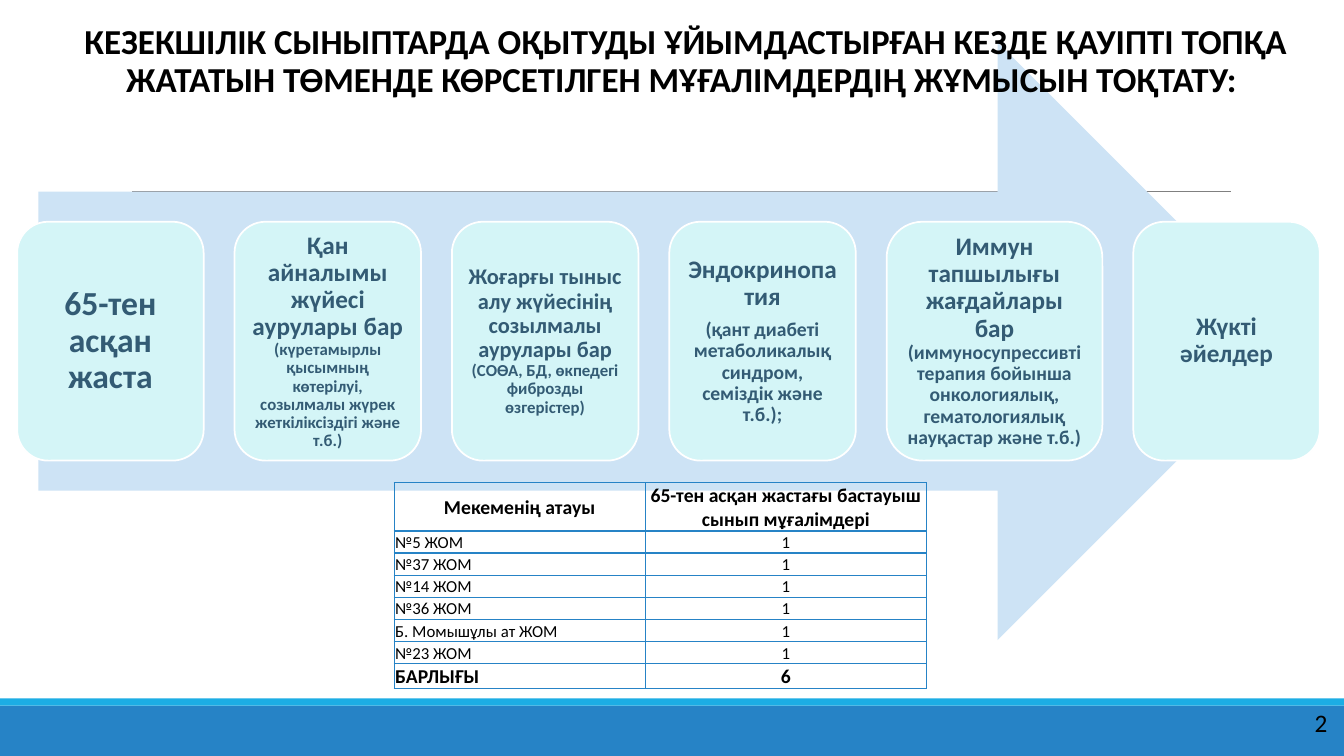
"""Build the slide on suspending the work of at-risk teachers."""
from dataclasses import dataclass

import pptx
import pptx.dml.color
import pptx.enum.shapes
import pptx.enum.text
import pptx.oxml
import pptx.oxml.ns
import pptx.util
from pptx.util import Inches

RGBColor = pptx.dml.color.RGBColor
Shapes = pptx.enum.shapes.MSO_SHAPE
Anchor = pptx.enum.text.MSO_ANCHOR
Align = pptx.enum.text.PP_ALIGN

BLACK = RGBColor(0x00, 0x00, 0x00)
WHITE = RGBColor(0xFF, 0xFF, 0xFF)
GREY = RGBColor(0x80, 0x80, 0x80)
BLUE = RGBColor(0x26, 0x83, 0xC6)
CYAN = RGBColor(0x1C, 0xAD, 0xE4)
ARROW_BLUE = RGBColor(0xCD, 0xE3, 0xF5)
CARD_FILL = RGBColor(0xD4, 0xF5, 0xF7)
CARD_TEXT = RGBColor(0x33, 0x5B, 0x74)
FONT = "Calibri"

CARDS_LEFT, CARDS_RIGHT = 0.17, 13.09
CARD_TOP, CARD_HEIGHT = 2.2, 2.37


@dataclass(frozen=True)
class Phrase:
    text: str
    size: int


@dataclass(frozen=True)
class RiskGroup:
    paragraphs: list[list[Phrase]]
    width: float = 1.85
    inset: float = 0.07


@dataclass(frozen=True)
class SchoolRow:
    school: str
    teachers: str
    height: float = 0.22
    size: int = 12
    bold: bool = False
    school_align: Align = Align.LEFT
    anchor: Anchor = Anchor.BOTTOM


RISK_GROUPS = [
    RiskGroup([[Phrase("65-тен асқан жаста", 24)]], inset=0.1),
    RiskGroup([[
        Phrase("Қан айналымы жүйесі аурулары бар ", 18),
        Phrase("(күретамырлы қысымның көтерілуі, созылмалы жүрек жеткіліксіздігі және т.б.)", 12),
    ]]),
    RiskGroup([[
        Phrase("Жоғарғы тыныс алу жүйесінің созылмалы аурулары бар", 16),
        Phrase(" ", 14),
        Phrase("(СОӨА, БД, өкпедегі фиброзды өзгерістер)", 12),
    ]]),
    RiskGroup([
        [Phrase("Эндокринопатия", 18)],
        [Phrase("(қант диабеті метаболикалық синдром, семіздік және т.б.);", 14)],
    ]),
    RiskGroup([[
        Phrase("Иммун тапшылығы жағдайлары бар ", 18),
        Phrase("(иммуносупрессивті терапия бойынша онкологиялық, "
               "гематологиялық науқастар және т.б.)", 14),
    ]], width=2.14),
    RiskGroup([[Phrase("Жүкті әйелдер", 18)]]),
]

SCHOOLS = ["№5 ЖОМ", "№37 ЖОМ", "№14 ЖОМ", "№36 ЖОМ", "Б. Момышұлы ат ЖОМ", "№23 ЖОМ"]
SCHOOL_ROWS = [
    SchoolRow("Мекеменің атауы", "65-тен асқан жастағы бастауыш сынып мұғалімдері",
              0.45, 14, True, Align.CENTER, Anchor.MIDDLE),
    *(SchoolRow(school, "1") for school in SCHOOLS),
    SchoolRow("БАРЛЫҒЫ", "6", 0.24, 14, True),
]


def style_run(run, size: float, color: RGBColor, bold: bool = False) -> None:
    run.font.name = FONT
    run.font.size = pptx.util.Pt(size)
    run.font.bold = bold
    run.font.color.rgb = color


def set_insets(target, left: float, top: float, right: float, bottom: float) -> None:
    target.margin_left, target.margin_top = Inches(left), Inches(top)
    target.margin_right, target.margin_bottom = Inches(right), Inches(bottom)


def add_block(slide, kind: Shapes, left: float, top: float, width: float, height: float,
              fill: RGBColor):
    block = slide.shapes.add_shape(
        kind, Inches(left), Inches(top), Inches(width), Inches(height))
    block.shadow.inherit = False
    block.fill.solid()
    block.fill.fore_color.rgb = fill
    block.line.fill.background()
    return block


def add_label(slide, text: str, left: float, top: float, width: float, height: float,
              size: float, bold: bool = False):
    label = slide.shapes.add_textbox(
        Inches(left), Inches(top), Inches(width), Inches(height))
    paragraph = label.text_frame.paragraphs[0]
    paragraph.text = text
    style_run(paragraph.runs[0], size, BLACK, bold)
    return label.text_frame


def add_rule(slide) -> None:
    rule = slide.shapes.add_connector(
        pptx.enum.shapes.MSO_CONNECTOR.STRAIGHT,
        Inches(1.31), Inches(1.9), Inches(12.21), Inches(1.9))
    rule.line.color.rgb = GREY
    rule.line.width = pptx.util.Pt(0.5)
    pptx.oxml.ns.qn("a:effectLst")
    rule.element.spPr.append(pptx.oxml.parse_xml(
        f'<a:effectLst {pptx.oxml.ns.nsdecls("a")}/>'))


def add_card(slide, group: RiskGroup, left: float) -> None:
    card = add_block(slide, Shapes.ROUNDED_RECTANGLE, left, CARD_TOP,
                     group.width, CARD_HEIGHT, CARD_FILL)
    card.line.color.rgb = WHITE
    card.line.width = pptx.util.Pt(1.25)
    frame = card.text_frame
    frame.word_wrap = True
    frame.vertical_anchor = Anchor.MIDDLE
    set_insets(frame, *[group.inset] * 4)
    for index, phrases in enumerate(group.paragraphs):
        paragraph = frame.add_paragraph() if index else frame.paragraphs[0]
        paragraph.alignment = Align.CENTER
        paragraph.line_spacing = 0.9
        paragraph.space_after = pptx.util.Pt(0.35 * phrases[0].size)
        for phrase in phrases:
            run = paragraph.add_run()
            run.text = phrase.text
            style_run(run, phrase.size, CARD_TEXT, True)


def add_borders(cell) -> None:
    properties = cell._tc.get_or_add_tcPr()
    for index, side in enumerate(("lnL", "lnR", "lnT", "lnB")):
        properties.insert(index, pptx.oxml.parse_xml(
            f'<a:{side} {pptx.oxml.ns.nsdecls("a")} w="12700"><a:solidFill>'
            f'<a:srgbClr val="{BLUE}"/></a:solidFill></a:{side}>'))


def add_school_table(slide) -> None:
    table = slide.shapes.add_table(
        len(SCHOOL_ROWS), 2, Inches(3.91), Inches(4.79), Inches(5.28),
        Inches(sum(row.height for row in SCHOOL_ROWS))).table
    table.first_row = table.horz_banding = False
    for column, width in zip(table.columns, (2.49, 2.79)):
        column.width = Inches(width)
    for index, row in enumerate(SCHOOL_ROWS):
        table.rows[index].height = Inches(row.height)
        entries = ((row.school, row.school_align), (row.teachers, Align.CENTER))
        for cell, (text, alignment) in zip(table.rows[index].cells, entries):
            cell.fill.background()
            add_borders(cell)
            cell.vertical_anchor = row.anchor
            set_insets(cell, 0.01, 0.01, 0.01, 0)
            paragraph = cell.text_frame.paragraphs[0]
            paragraph.text = text
            paragraph.alignment = alignment
            style_run(paragraph.runs[0], row.size, BLACK, row.bold)


def main() -> None:
    deck = pptx.Presentation()
    deck.slide_width, deck.slide_height = Inches(13.33), Inches(7.5)
    slide = deck.slides.add_slide(deck.slide_layouts[6])

    add_block(slide, Shapes.RECTANGLE, 0, 7, 13.33, 0.5, BLUE)
    add_block(slide, Shapes.RECTANGLE, 0, 6.93, 13.33, 0.07, CYAN)
    add_rule(slide)
    add_label(slide, "2", 12.94, 6.97, 0.34, 0.4, 18)
    add_block(slide, Shapes.RIGHT_ARROW, 0.38, 0.42, 12.48, 5.93, ARROW_BLUE)

    total_width = sum(group.width for group in RISK_GROUPS)
    gap = (CARDS_RIGHT - CARDS_LEFT - total_width) / (len(RISK_GROUPS) - 1)
    left = CARDS_LEFT
    for group in RISK_GROUPS:
        add_card(slide, group, left)
        left += group.width + gap

    title = add_label(
        slide, "КЕЗЕКШІЛІК СЫНЫПТАРДА ОҚЫТУДЫ ҰЙЫМДАСТЫРҒАН КЕЗДЕ ҚАУІПТІ ТОПҚА "
        "ЖАТАТЫН ТӨМЕНДЕ КӨРСЕТІЛГЕН МҰҒАЛІМДЕРДІҢ ЖҰМЫСЫН ТОҚТАТУ: ",
        0.66, 0.17, 12.28, 0.89, 25, True)
    title.word_wrap = True
    title.vertical_anchor = Anchor.MIDDLE
    title.paragraphs[0].alignment = Align.CENTER
    title.paragraphs[0].line_spacing = 0.9
    add_school_table(slide)
    deck.save("out.pptx")


if __name__ == "__main__":
    main()
